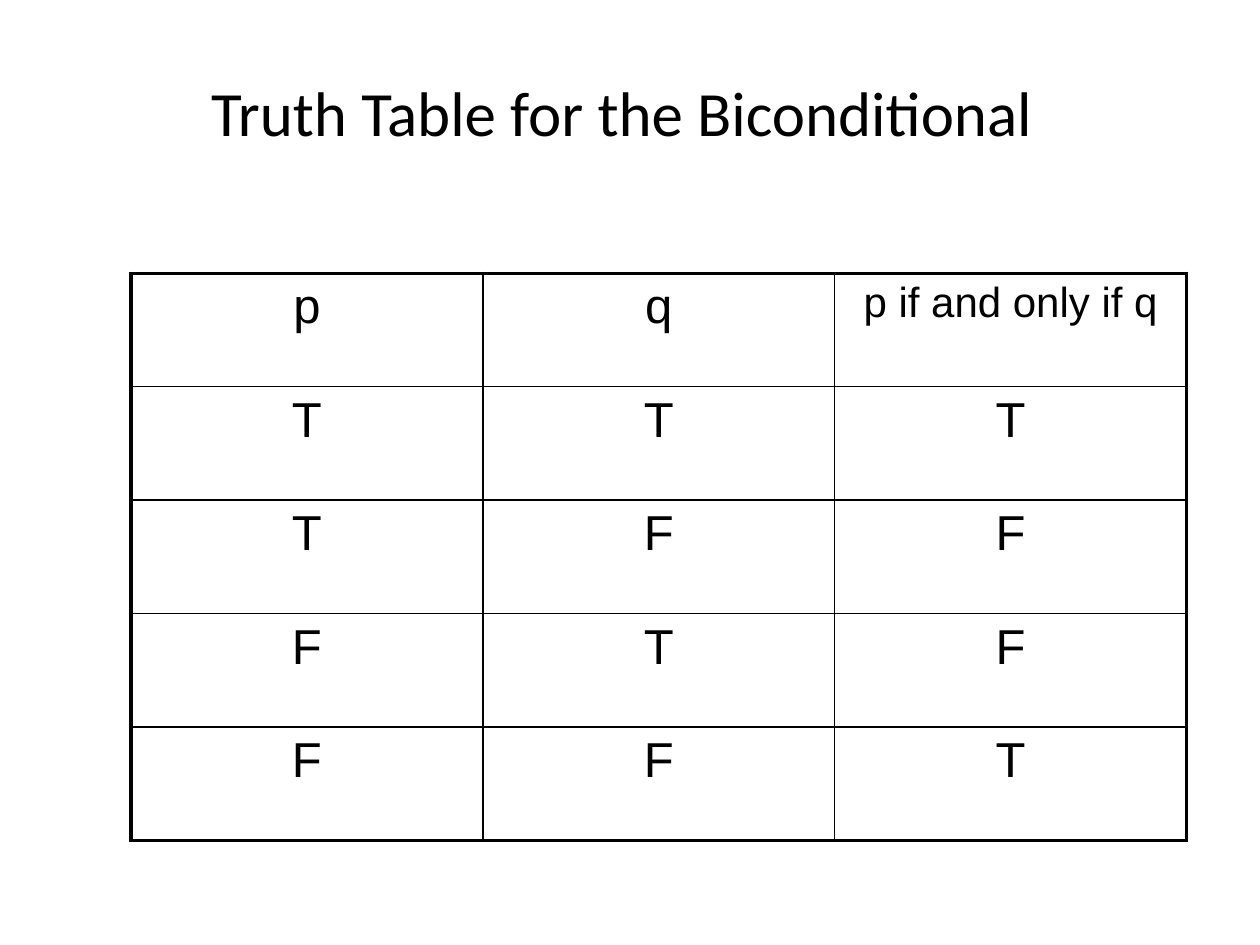
from lxml.etree import SubElement
from pptx import Presentation
from pptx.dml.color import RGBColor
from pptx.enum.text import MSO_ANCHOR, PP_ALIGN
from pptx.oxml.ns import qn
from pptx.util import Cm, Pt

COLORS = {"ink": "000000", "paper": "FFFFFF"}
OUTER_LINE, INNER_LINE = Pt(2.25), Pt(1)
TRUTH_ROWS = [
    ("p", "q", "p if and only if q"),
    ("T", "T", "T"),
    ("T", "F", "F"),
    ("F", "T", "F"),
    ("F", "F", "T"),
]


def format_paragraph(paragraph, font_name, size):
    paragraph.alignment = PP_ALIGN.CENTER
    paragraph.font.name = font_name
    paragraph.font.size = Pt(size)
    paragraph.font.color.rgb = RGBColor.from_string(COLORS["ink"])


def add_title(slide, left, top, width, height):
    text_frame = slide.shapes.add_textbox(left, top, width, height).text_frame
    text_frame.word_wrap = True
    text_frame.vertical_anchor = MSO_ANCHOR.MIDDLE
    text_frame.text = "Truth Table for the Biconditional"
    format_paragraph(text_frame.paragraphs[0], "Calibri", 36)


def set_borders(cell, is_outer):
    """Draw each side of a cell, heavier where it is on the table's edge."""
    properties = cell._tc.get_or_add_tcPr()
    for side, outer in is_outer.items():
        line = SubElement(properties, qn(f"a:ln{side}"))
        line.set("w", str(OUTER_LINE if outer else INNER_LINE))
        fill = SubElement(line, qn("a:solidFill"))
        SubElement(fill, qn("a:srgbClr")).set("val", COLORS["ink"])


def add_truth_table(slide, left, top, width, height):
    row_count, column_count = len(TRUTH_ROWS), len(TRUTH_ROWS[0])
    table = slide.shapes.add_table(
        row_count, column_count, left, top, width, height
    ).table
    table.first_row = False
    table.horz_banding = False

    for row, values in enumerate(TRUTH_ROWS):
        for column, value in enumerate(values):
            cell = table.cell(row, column)
            cell.text = value
            # The long heading is set smaller to stay on one line
            size = 28 if len(value) == 1 else 24
            format_paragraph(cell.text_frame.paragraphs[0], "Arial", size)
            set_borders(cell, {
                "L": column == 0,
                "R": column == column_count - 1,
                "T": row == 0,
                "B": row == row_count - 1,
            })
            cell.fill.solid()
            cell.fill.fore_color.rgb = RGBColor.from_string(COLORS["paper"])


def main():
    presentation = Presentation()
    presentation.slide_width = Cm(25.4)
    presentation.slide_height = Cm(19.05)
    slide = presentation.slides.add_slide(presentation.slide_layouts[6])

    add_title(slide, Cm(2.59), Cm(0.28), Cm(19.89), Cm(3.94))
    add_truth_table(slide, Cm(2.64), Cm(5.51), Cm(21.28), Cm(11.43))

    presentation.save("out.pptx")


if __name__ == "__main__":
    main()
